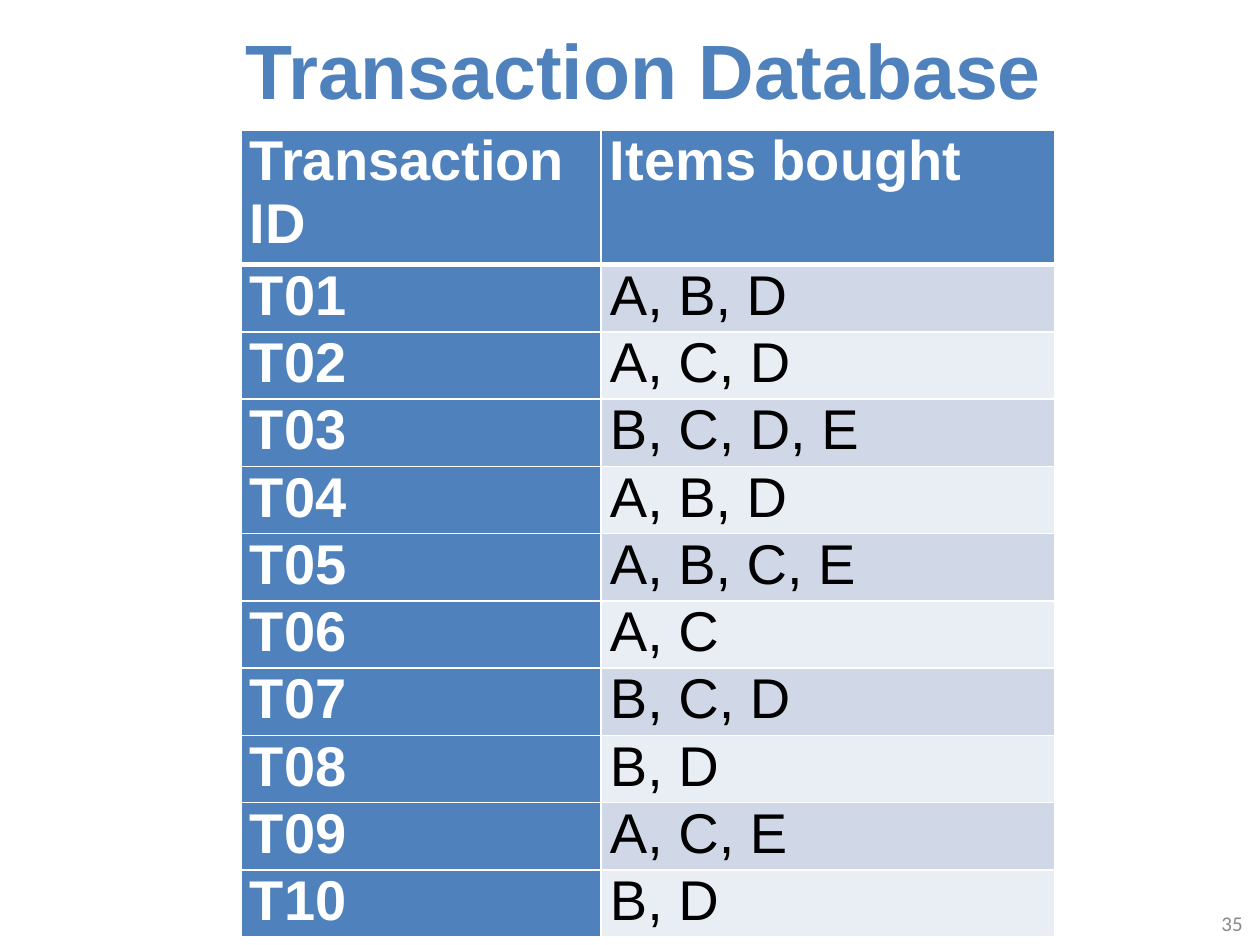
"""Build the Transaction Database slide with its table of items bought."""
import pptx
import pptx.dml.color
import pptx.enum.text
import pptx.oxml
import pptx.oxml.ns
import pptx.util

TITLE = "Transaction Database"
PAGE = "35"
HEADER = ("Transaction ID", "Items bought")
BASKETS = ["A, B, D", "A, C, D", "B, C, D, E", "A, B, D", "A, B, C, E",
           "A, C", "B, C, D", "B, D", "A, C, E", "B, D"]

THEME = {
    "accent": "4F81BD", "light": "FFFFFF", "dark": "000000", "muted": "898989",
    "bands": ("D0D8E8", "E9EDF4"), "font": "Arial", "page_font": "Calibri",
    "title_size": 44, "cell_size": 32, "page_size": 12, "line": 1, "head_line": 3,
}
SLIDE = (1260, 945)
TITLE_BOX = (233, 16, 829, 106)
PAGE_BOX = (961, 898, 294, 50)
TABLE_AT = (241, 130)
COLUMNS = (360, 454)
HEAD_HEIGHT, ROW_HEIGHT, CELL_INSET = 101, 67, 9
ALIGN = pptx.enum.text.PP_ALIGN
ANCHOR = pptx.enum.text.MSO_ANCHOR


def px(n):
    return pptx.util.Emu(round(n * 914400 / 126))


def rgb(value):
    return pptx.dml.color.RGBColor.from_string(value)


def write(tf, text, color, size, font, bold=False, align=ALIGN.LEFT):
    p = tf.paragraphs[0]
    p.alignment = align
    r = p.add_run()
    r.text = text
    for name, value in {"size": pptx.util.Pt(size), "name": font, "bold": bold}.items():
        setattr(r.font, name, value)
    r.font.color.rgb = rgb(color)


def add_text(s, box, formats, *text, **style):
    tf = s.shapes.add_textbox(*map(px, box)).text_frame
    for name, value in formats.items():
        setattr(tf, name, value)
    write(tf, *text, **style)


def set_borders(cell, widths):
    tc_pr = cell._tc.get_or_add_tcPr()
    for i, (side, width) in enumerate(widths.items()):
        tc_pr.insert(i, pptx.oxml.parse_xml(
            f'<a:ln{side} {pptx.oxml.ns.nsdecls("a")} w="{pptx.util.Pt(width)}">'
            f'<a:solidFill><a:srgbClr val="{THEME["light"]}"/></a:solidFill></a:ln{side}>'))


def add_table(s):
    rows = [HEADER] + [(f"T{i:02}", items) for i, items in enumerate(BASKETS, 1)]
    heights = [HEAD_HEIGHT] + [ROW_HEIGHT] * len(BASKETS)
    size = (sum(COLUMNS), sum(heights))
    table = s.shapes.add_table(len(rows), len(COLUMNS), *map(px, TABLE_AT + size)).table
    for column, width in zip(table.columns, COLUMNS):
        column.width = px(width)
    for i, (row, height) in enumerate(zip(rows, heights)):
        table.rows[i].height = px(height)
        edges = {"L": THEME["line"], "R": THEME["line"],
                 "T": THEME["head_line" if i == 1 else "line"],
                 "B": THEME["head_line" if i == 0 else "line"]}
        for j, text in enumerate(row):
            strong = i == 0 or j == 0
            cell = table.cell(i, j)
            formats = {"margin_left": px(CELL_INSET), "margin_right": px(CELL_INSET),
                       "margin_top": 0, "margin_bottom": 0}
            for name, value in formats.items():
                setattr(cell, name, value)
            cell.fill.solid()
            cell.fill.fore_color.rgb = rgb(THEME["accent"] if strong else THEME["bands"][(i - 1) % 2])
            set_borders(cell, edges)
            write(cell.text_frame, text, THEME["light" if strong else "dark"],
                  THEME["cell_size"], THEME["font"], bold=strong)


def main():
    prs = pptx.Presentation()
    prs.slide_width, prs.slide_height = map(px, SLIDE)
    s = prs.slides.add_slide(prs.slide_layouts[6])
    add_text(s, PAGE_BOX, {"word_wrap": True, "vertical_anchor": ANCHOR.MIDDLE},
             PAGE, THEME["muted"], THEME["page_size"], THEME["page_font"], align=ALIGN.RIGHT)
    add_table(s)
    add_text(s, TITLE_BOX,
             {"word_wrap": False, "auto_size": pptx.enum.text.MSO_AUTO_SIZE.SHAPE_TO_FIT_TEXT},
             TITLE, THEME["accent"], THEME["title_size"], THEME["font"], bold=True)
    prs.save("out.pptx")


if __name__ == "__main__":
    main()
